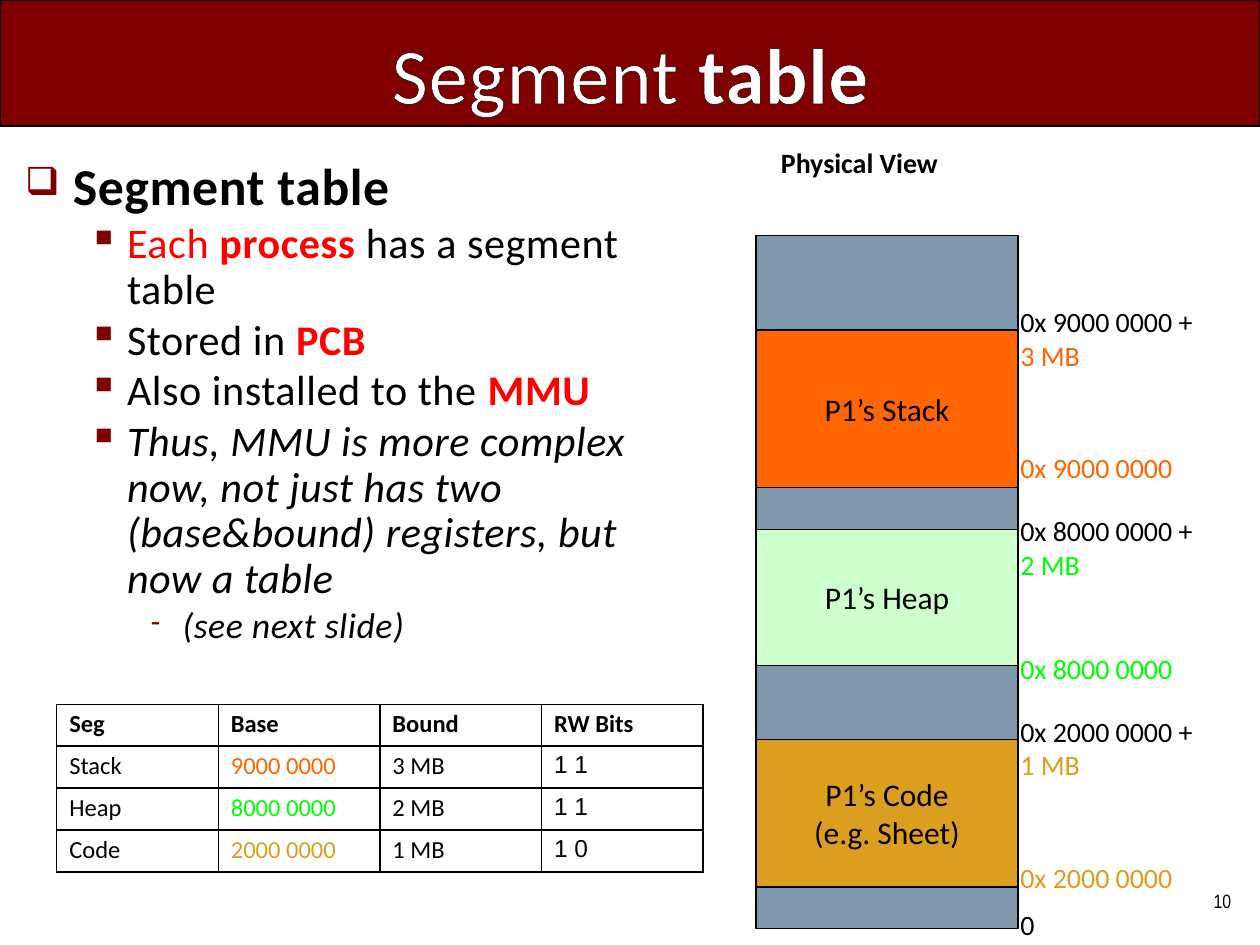
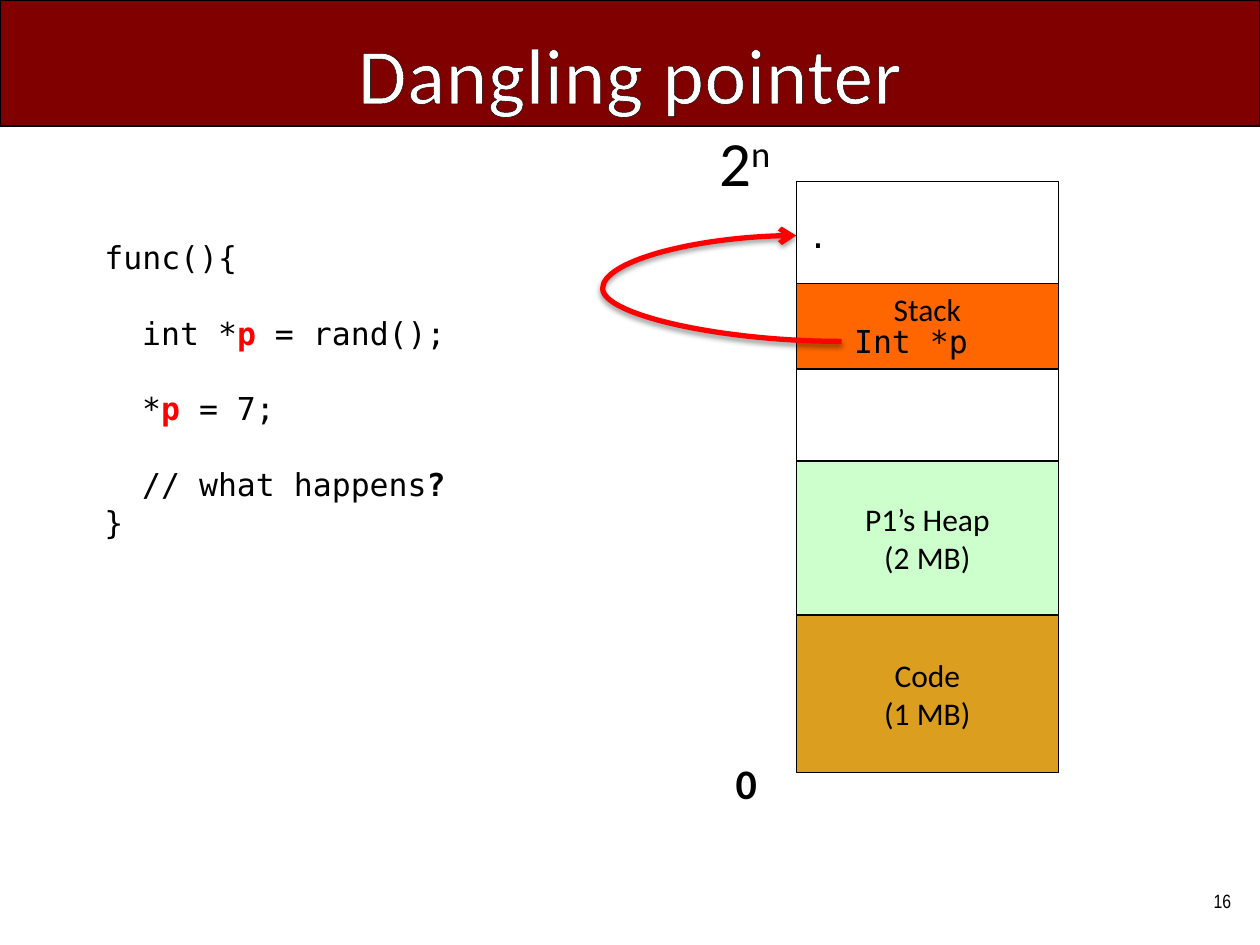
from lxml import etree
from pptx import Presentation
from pptx import util as u
from pptx.dml.color import RGBColor
from pptx.enum import shapes, text
from pptx.oxml import ns

SLIDE_W, SLIDE_H = u.Inches(10), u.Inches(7.5)
COLS = 100
CELL = SLIDE_W / COLS
ROWS = SLIDE_H / CELL

BLACK, WHITE, RED = "000000", "FFFFFF", "FF0000"
MAROON, SLATE = "800000", "7E97AD"
ORANGE, MINT, GREEN, GOLD = "FF6600", "CCFFCC", "00FF00", "DC9E1F"
BODY_FONT, CODE_FONT = "Calibri", "DejaVu Sans Mono"
LEFT, CENTER, RIGHT = text.PP_ALIGN.LEFT, text.PP_ALIGN.CENTER, text.PP_ALIGN.RIGHT
TOP, MIDDLE, BOTTOM = text.MSO_ANCHOR.TOP, text.MSO_ANCHOR.MIDDLE, text.MSO_ANCHOR.BOTTOM


def rgb(color):
    return RGBColor.from_string(color)


def grid(*cells):
    return [u.Emu(round(n * CELL)) for n in cells]


def xml(parent, tag, index=None, **attrs):
    el = etree.Element(ns.qn(tag), {k: str(v) for k, v in attrs.items()})
    parent.insert(len(parent) if index is None else index, el)
    return el


def xml_fill(parent, color):
    return xml(xml(parent, "a:solidFill"), "a:srgbClr", val=color)


def format_run(r, size=16, font=BODY_FONT, color=BLACK, bold=False, italic=False,
               spacing=None, outline=None, raised=None):
    r.font.size, r.font.name = u.Pt(size), font
    r.font.bold, r.font.italic = bold, italic
    r.font.color.rgb = rgb(color)
    rPr = r._r.get_or_add_rPr()
    if spacing:
        rPr.set("spc", str(round(spacing * 100)))
    if raised:
        rPr.set("baseline", str(raised * 1000))
    if outline:
        xml_fill(xml(rPr, "a:ln", 0, w=u.Pt(1)), outline)


def write(tf, paragraphs, align=LEFT, anchor=TOP, wrap=True, **fmt):
    tf.word_wrap = wrap
    tf.auto_size = text.MSO_AUTO_SIZE.NONE
    tf.vertical_anchor = anchor
    for i, runs in enumerate(paragraphs):
        p = tf.add_paragraph() if i else tf.paragraphs[0]
        p.alignment = align
        for run in [runs] if isinstance(runs, str) else runs:
            words, own = (run, {}) if isinstance(run, str) else run
            r = p.add_run()
            r.text = words
            format_run(r, **{**fmt, **own})
    return tf


def textbox(s, box, paragraphs, border=None, **fmt):
    sp = s.shapes.add_textbox(*grid(*box))
    if border:
        sp.line.color.rgb, sp.line.width = rgb(border), u.Pt(0.75)
    return write(sp.text_frame, paragraphs, **fmt)


def paint(sp, fill):
    sp.fill.solid()
    sp.fill.fore_color.rgb = rgb(fill)
    sp.line.color.rgb, sp.line.width = rgb(BLACK), u.Pt(0.75)


def block(s, box, fill, paragraphs=(), anchor=MIDDLE):
    sp = s.shapes.add_shape(shapes.MSO_SHAPE.RECTANGLE, *grid(*box))
    sp.shadow.inherit = False
    paint(sp, fill)
    write(sp.text_frame, paragraphs, align=CENTER, anchor=anchor, wrap=False, size=18)


def titled_slide(prs, title, number):
    s = prs.slides.add_slide(prs.slide_layouts[5])
    band = s.shapes.title
    band.left, band.top, band.width, band.height = grid(0, 0, COLS, 10)
    paint(band, MAROON)
    write(band.text_frame, [title], align=CENTER, anchor=BOTTOM, size=45,
          color=WHITE, spacing=0.5, outline=BLACK)
    textbox(s, (COLS - 12.1, ROWS - 5.5, 10.8, 4), [number], align=RIGHT,
            anchor=MIDDLE, size=11, font="Arial Narrow")
    return s


def memory_column(s, box, fill, segments):
    x, y, w, h = box
    block(s, box, fill)
    for top, height, color, lines, anchor in segments:
        block(s, (x, y + top, w, height), color, lines, anchor)


def address_labels(s, box, labels):
    x, y, w, h = box
    for end_row, start_row, start, size, color in labels:
        textbox(s, (x, y + end_row, w, 6.4), [f"{start} +", [(size, dict(color=color))]])
        textbox(s, (x, y + start_row, w, 3.7), [[(start, dict(color=color))]])
    textbox(s, (x, y + h - 2.2, w, 3.7), ["0"])


def bullet_list(s, box, items):
    styles = [dict(size=29.6, bold=True), dict(size=24.1), dict(size=20.4, italic=True)]
    layout = [(3.8, 3.8, 15, "❑", 75), (8.1, 3.1, 3, "▪", 100), (12.5, 2.5, 3, "-", 75)]
    paragraphs = [[(words, {**styles[level], **own}) for words, own in runs]
                  for level, runs in items]
    tf = textbox(s, box, paragraphs, spacing=0.3)
    for p, (level, runs) in zip(tf.paragraphs, items):
        left, hang, before, mark, percent = layout[level]
        p.level, p.line_spacing, p.space_before = level, 0.9, u.Pt(before)
        pPr = p._p.get_or_add_pPr()
        margin, indent = grid(left, -hang)
        pPr.set("marL", str(margin))
        pPr.set("indent", str(indent))
        xml(xml(pPr, "a:buClr"), "a:srgbClr", val=MAROON)
        xml(pPr, "a:buSzPct", val=percent * 1000)
        xml(pPr, "a:buChar", char=mark)


def segment_table(s, box, header, rows, colors):
    table = s.shapes.add_table(len(rows) + 1, len(header), *grid(*box)).table
    table.first_row = table.horz_banding = False
    for i, row in enumerate([header] + rows):
        for j, words in enumerate(row):
            cell = table.cell(i, j)
            cell.margin_top = cell.margin_bottom = u.Inches(0.04)
            cell.fill.background()
            tcPr = cell._tc.get_or_add_tcPr()
            for k, side in enumerate(["a:lnL", "a:lnR", "a:lnT", "a:lnB"]):
                xml_fill(xml(tcPr, side, k, w=u.Pt(1)), BLACK)
            r = cell.text_frame.paragraphs[0].add_run()
            r.text = words
            format_run(r, size=14, bold=i == 0,
                       color=colors[i - 1] if i and j == 1 else BLACK,
                       font="Arial" if i and j == 3 else BODY_FONT)


def code_listing(s, box, lines):
    pitch = u.Pt(21.6)
    tf = textbox(s, box, [runs for indent, gap, runs in lines], size=18, font=CODE_FONT)
    for p, (indent, gap, runs) in zip(tf.paragraphs, lines):
        p.line_spacing, p.space_before = pitch, gap * pitch
        p._p.get_or_add_pPr().set("marL", str(grid(indent * 1.5)[0]))


def pointer_arrow(s, start, end, bulge):
    c = s.shapes.add_connector(shapes.MSO_CONNECTOR.CURVE, *grid(*start, *end))
    c.line.color.rgb, c.line.width = rgb(RED), u.Pt(3)
    spPr = c._element.spPr
    guides = spPr.find(ns.qn("a:prstGeom")).get_or_add_avLst()
    xml(guides, "a:gd", name="adj1", fmla=f"val {round(bulge * 100000)}")
    xml(spPr.find(ns.qn("a:ln")), "a:tailEnd", type="arrow")
    shadow = xml(xml(spPr, "a:effectLst"), "a:outerShdw", blurRad=u.Pt(3),
                 dist=u.Pt(2), dir=90 * 60000, rotWithShape=0)
    xml(xml(shadow, "a:srgbClr", val=BLACK), "a:alpha", val=40000)


def segment_table_slide(prs):
    s = titled_slide(prs, ["Segment ", ("table", dict(bold=True))], "10")
    plain, red = {}, dict(color=RED)
    red_bold = dict(color=RED, bold=True)
    bullet_list(s, (1, 12.3, 55.8, 36.2), [
        (0, [("Segment table", plain)]),
        (1, [("Each ", red), ("process ", red_bold), ("has a segment table", plain)]),
        (1, [("Stored in ", plain), ("PCB", red_bold)]),
        (1, [("Also installed to the ", plain), ("MMU", red_bold)]),
        (1, [("Thus, MMU is more complex now, not just has two (base&bound) "
              "registers, but now a table", dict(italic=True))]),
        (2, [("(see next slide)", plain)]),
    ])
    segment_table(s, (4.5, 55.9, 51.3, 13.3), ["Seg", "Base", "Bound", "RW Bits"], [
        ["Stack", "9000 0000", "3 MB", "1 1"],
        ["Heap", "8000 0000", "2 MB", "1 1"],
        ["Code", "2000 0000", "1 MB", "1 0"],
    ], [ORANGE, GREEN, GOLD])
    textbox(s, (61, 11.1, 19, 3.7), ["Physical View"], border=WHITE, bold=True)
    memory_column(s, (60, 18.7, 20.8, 55), SLATE, [
        (7.5, 12.5, ORANGE, ["P1’s Stack"], MIDDLE),
        (23.3, 10.8, MINT, ["P1’s Heap"], MIDDLE),
        (40, 11.7, GOLD, ["P1’s Code", "(e.g. Sheet)"], MIDDLE),
    ])
    address_labels(s, (80, 18.7, 16.4, 55), [
        (5, 16.6, "0x 9000 0000", "3 MB", ORANGE),
        (21.6, 32.5, "0x 8000 0000", "2 MB", GREEN),
        (37.5, 49.1, "0x 2000 0000", "1 MB", GOLD),
    ])


def dangling_pointer_slide(prs):
    s = titled_slide(prs, "Dangling pointer", "16")
    variable = dict(color=RED, bold=True)
    code_listing(s, (7.3, 18.4, 40.2, 31.3), [
        (0, 0, "func(){"),
        (2, 1, ["int *", ("p ", variable), "= rand();"]),
        (2, 1, ["*", ("p", variable), " = 7;"]),
        (2, 1, ["// what happens", ("?", dict(bold=True))]),
        (0, 0, "}"),
    ])
    memory_column(s, (63.2, 14.4, 20.8, 22.2), WHITE, [
        (8.1, 6.8, ORANGE, ["Stack"], TOP),
        (22.2, 12.2, MINT, ["P1’s Heap", "(2 MB)"], MIDDLE),
        (34.4, 12.5, GOLD, ["Code", "(1 MB)"], MIDDLE),
    ])
    textbox(s, (57.4, 59.6, 4.8, 5), ["0"], border=WHITE, size=24, bold=True)
    textbox(s, (56.1, 9.3, 12.1, 7.1), [["2", ("n", dict(raised=30))]], size=36)
    pointer_arrow(s, (66.8, 27.1), (63.2, 18.7), 5.27)
    for x, y, words in [(66.8, 25.1, "Int *p"), (63.2, 16.7, ".")]:
        textbox(s, (x, y, 13.8, 4), [words], size=18, font=CODE_FONT)


def main():
    prs = Presentation()
    prs.slide_width, prs.slide_height = SLIDE_W, SLIDE_H
    segment_table_slide(prs)
    dangling_pointer_slide(prs)
    prs.save("out.pptx")


if __name__ == "__main__":
    main()
